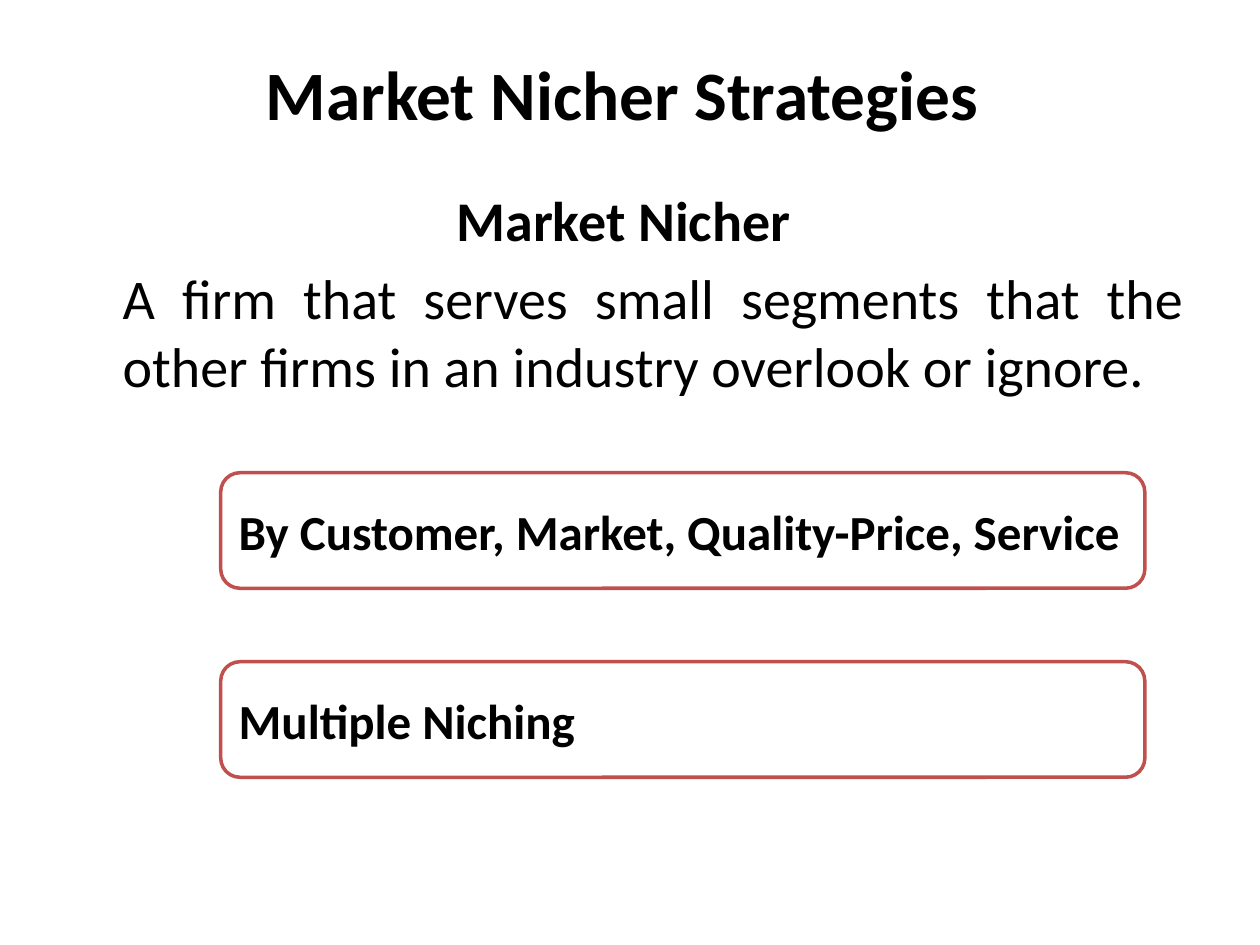
"""Build the Market Nicher Strategies slide."""
from lxml import etree
from pptx import Presentation, util as u
from pptx.dml.color import RGBColor
from pptx.enum import shapes, text
from pptx.oxml.ns import qn

TITLE = "Market Nicher Strategies "
BODY = [
    ("Market Nicher ", True, text.PP_ALIGN.CENTER, 0, 0),
    ("A firm that serves small segments that the other firms in an industry "
     "overlook or ignore. ", False, text.PP_ALIGN.JUSTIFY, 0.95, 6.4),
]
STRATEGIES = ["By Customer, Market, Quality-Price, Service", "Multiple Niching "]

FONT = "Calibri"
BLACK = RGBColor(0x00, 0x00, 0x00)
WHITE = RGBColor(0xFF, 0xFF, 0xFF)
RED = RGBColor(0xC0, 0x50, 0x4D)
BOX_LEFT, BOX_TOP, BOX_WIDTH, BOX_HEIGHT, BOX_STEP = 4.45, 9.53, 18.63, 2.33, 3.81


def place(s, left, top, width, height):
    s.left, s.top = u.Cm(left), u.Cm(top)
    s.width, s.height = u.Cm(width), u.Cm(height)


def add_run(p, words, size, bold, align):
    p.alignment = align
    r = p.add_run()
    r.text = words
    r.font.name, r.font.size, r.font.bold = FONT, u.Pt(size), bold
    r.font.color.rgb = BLACK


def fill_title(s):
    place(s, 1.27, 0.76, 22.86, 2.21)
    tf = s.text_frame
    tf.auto_size = text.MSO_AUTO_SIZE.NONE
    tf.vertical_anchor = text.MSO_ANCHOR.MIDDLE
    add_run(tf.paragraphs[0], TITLE, 39.6, True, text.PP_ALIGN.CENTER)


def fill_body(s):
    place(s, 1.27, 3.61, 22.86, 5.28)
    tf = s.text_frame
    tf.auto_size = text.MSO_AUTO_SIZE.NONE
    for i, (words, bold, align, margin, before) in enumerate(BODY):
        p = tf.add_paragraph() if i else tf.paragraphs[0]
        pPr = p._p.get_or_add_pPr()
        pPr.set("marL", str(u.Cm(margin)))
        pPr.set("indent", "0")
        etree.SubElement(pPr, qn("a:buNone"))
        p.space_before = u.Pt(before)
        add_run(p, words, 32, bold, align)


def add_strategy(slide, i, words):
    s = slide.shapes.add_shape(
        shapes.MSO_SHAPE.ROUNDED_RECTANGLE, u.Cm(BOX_LEFT),
        u.Cm(BOX_TOP + i * BOX_STEP), u.Cm(BOX_WIDTH), u.Cm(BOX_HEIGHT))
    s.shadow.inherit = False
    s.fill.solid()
    s.fill.fore_color.rgb = WHITE
    s.line.color.rgb = RED
    s.line.width = u.Pt(2)
    tf = s.text_frame
    tf.word_wrap = True
    tf.vertical_anchor = text.MSO_ANCHOR.MIDDLE
    add_run(tf.paragraphs[0], words, 28, True, text.PP_ALIGN.JUSTIFY)


def main():
    prs = Presentation()
    prs.slide_width, prs.slide_height = u.Cm(25.4), u.Cm(19.05)
    slide = prs.slides.add_slide(prs.slide_layouts[1])
    fill_title(slide.shapes.title)
    fill_body(slide.placeholders[1])
    for i, words in enumerate(STRATEGIES):
        add_strategy(slide, i, words)
    prs.save("out.pptx")


if __name__ == "__main__":
    main()
